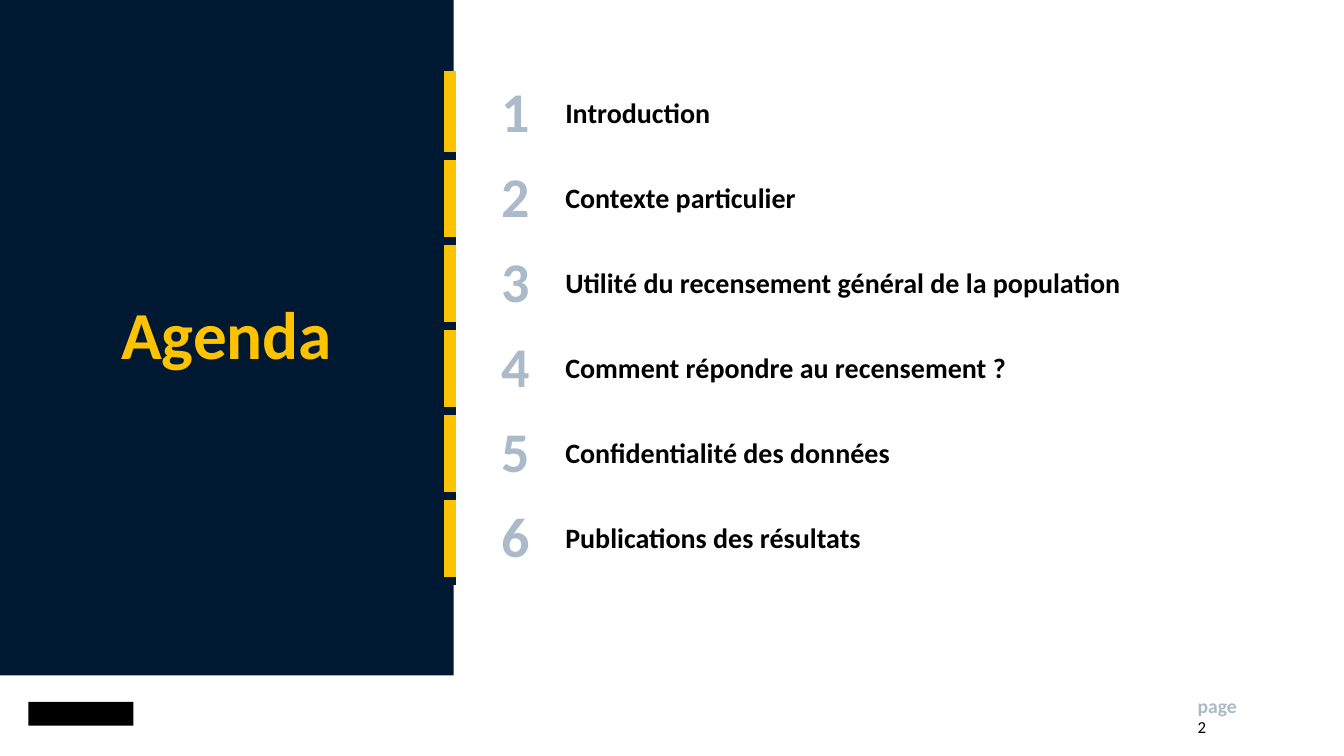
"""Build the agenda slide: a dark title panel, six numbered topics and a page footer."""
from lxml import etree
from pptx import Presentation
from pptx.dml.color import RGBColor
from pptx.enum import shapes, text
from pptx.oxml import ns
from pptx.util import Pt

TITLE = "Agenda"
TOPICS = [
    "Introduction",
    "Contexte particulier",
    "Utilité du recensement général de la population",
    "Comment répondre au recensement ?",
    "Confidentialité des données",
    "Publications des résultats",
]
FOOTER = ("page", "2")

THEME = {
    "font": "Calibri",
    "navy": "001932", "gold": "FDC300", "mist": "ABBAC9", "black": "000000",
    "title": 48, "number": 40, "topic": 20, "label": 14, "page": 12,
}
SLIDE = (960, 540)
PANEL = (0, 0, 324, 482.4)
EMBLEM = (20.3, 501.3, 75, 17)
AGENDA_LEFT, AGENDA_TOP = 316.8, 50.7
COLUMNS = (8.6, 71.2, 498)
ROW_HEIGHT, RULE_WIDTH = 60.72, 6
FOOTER_LEFT = 855.4
PLAIN_TABLE = "{2D5ABB26-0587-4C30-8999-92F81FD0307C}"


def colour(name):
    return RGBColor.from_string(THEME[name])


def write(frame, words, size, ink, bold=True, align=text.PP_ALIGN.LEFT, spacing=None):
    paragraph = frame.paragraphs[0]
    paragraph.alignment = align
    if spacing:
        paragraph.line_spacing = spacing
    run = paragraph.add_run()
    run.text = words
    run.font.name = THEME["font"]
    run.font.size = Pt(THEME[size])
    run.font.bold = bold
    run.font.color.rgb = colour(ink)
    return paragraph


def clear_margins(frame):
    frame.margin_left = frame.margin_right = frame.margin_top = frame.margin_bottom = 0


def add_block(slide, box, fill):
    block = slide.shapes.add_shape(shapes.MSO_SHAPE.RECTANGLE, *map(Pt, box))
    block.shadow.inherit = False
    block.fill.solid()
    block.fill.fore_color.rgb = colour(fill)
    block.line.fill.background()
    return block


def add_rules(cell, sides):
    properties = cell._tc.get_or_add_tcPr()
    for position, side in enumerate(sides):
        rule = etree.Element(ns.qn(f"a:ln{side}"), w=str(Pt(RULE_WIDTH)))
        fill = etree.SubElement(rule, ns.qn("a:solidFill"))
        etree.SubElement(fill, ns.qn("a:srgbClr"), val=THEME["navy"])
        properties.insert(position, rule)


def add_agenda(slide):
    holder = slide.shapes.add_table(
        len(TOPICS), len(COLUMNS), Pt(AGENDA_LEFT), Pt(AGENDA_TOP),
        Pt(sum(COLUMNS)), Pt(ROW_HEIGHT * len(TOPICS)))
    agenda = holder.table
    agenda.first_row = agenda.horz_banding = False
    next(holder.element.iter(ns.qn("a:tableStyleId"))).text = PLAIN_TABLE
    for column, width in zip(agenda.columns, COLUMNS):
        column.width = Pt(width)
    for index, (row, topic) in enumerate(zip(agenda.rows, TOPICS)):
        row.height = Pt(ROW_HEIGHT)
        marker, number, label = row.cells
        clear_margins(marker)
        marker.fill.solid()
        marker.fill.fore_color.rgb = colour("gold")
        add_rules(marker, "TB" if index else "B")
        for cell in (number, label):
            cell.fill.background()
            cell.vertical_anchor = text.MSO_ANCHOR.MIDDLE
        figure = write(number.text_frame, str(index + 1), "number", "mist",
                       align=text.PP_ALIGN.CENTER)
        figure._p.get_or_add_pPr().set("marL", str(Pt(14.4)))
        write(label.text_frame, topic, "topic", "black")


def add_footer(slide):
    label, page = FOOTER
    lines = [(label, 495.4, 14.4, "label", "mist", True),
             (page, 511.9, 20.2, "page", "black", False)]
    for words, top, height, size, ink, bold in lines:
        box = slide.shapes.add_textbox(Pt(FOOTER_LEFT), Pt(top), Pt(48), Pt(height))
        box.text_frame.word_wrap = True
        clear_margins(box.text_frame)
        write(box.text_frame, words, size, ink, bold=bold)


def main():
    deck = Presentation()
    deck.slide_width, deck.slide_height = map(Pt, SLIDE)
    slide = deck.slides.add_slide(deck.slide_layouts[6])
    add_footer(slide)
    add_block(slide, EMBLEM, "black")
    heading = add_block(slide, PANEL, "navy").text_frame
    clear_margins(heading)
    heading.vertical_anchor = text.MSO_ANCHOR.MIDDLE
    write(heading, TITLE, "title", "gold", align=text.PP_ALIGN.CENTER, spacing=0.9)
    add_agenda(slide)
    deck.save("out.pptx")


if __name__ == "__main__":
    main()
